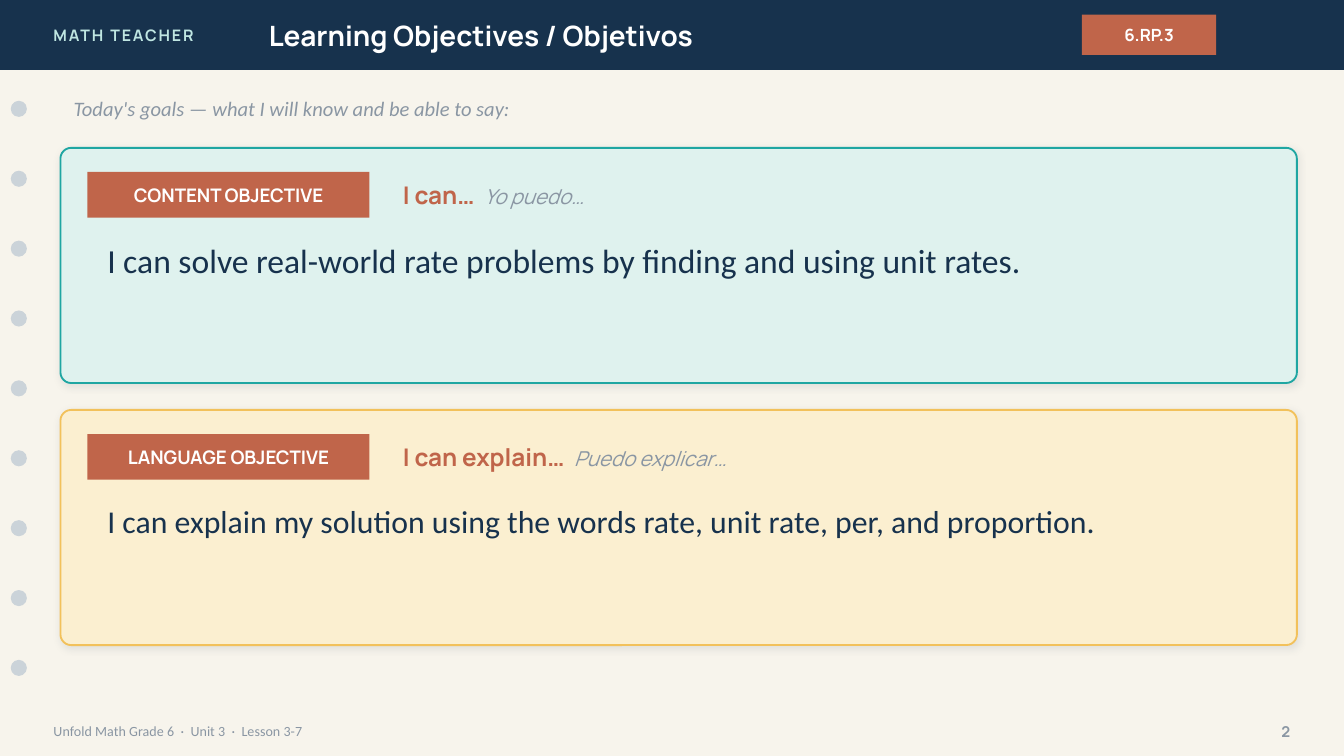
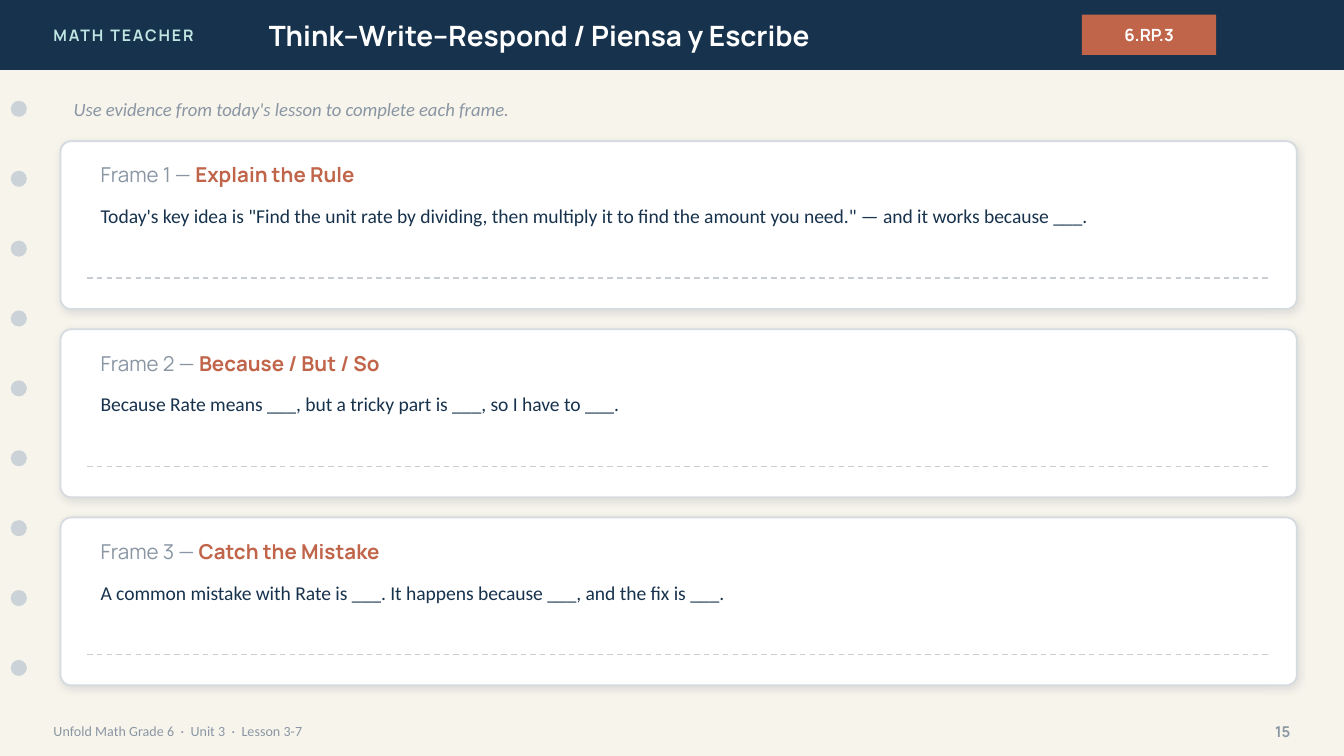
from lxml.etree import SubElement
from pptx import Presentation
from pptx.dml.color import RGBColor
from pptx.enum.dml import MSO_LINE
from pptx.enum.shapes import MSO_CONNECTOR, MSO_SHAPE
from pptx.enum.text import MSO_ANCHOR, MSO_AUTO_SIZE, PP_ALIGN
from pptx.oxml.ns import qn
from pptx.util import Pt

HUES = {
    "paper": "F7F4EC", "navy": "17324D", "mint": "BFE6E2", "white": "FFFFFF",
    "rust": "C0654A", "dot": "CBD3D9", "gray": "8A96A3", "shade": "1C2E42",
    "edge": "D6DBDF", "rule": "C7CDD2", "teal": "1FA6A2", "aqua": "DFF2EE",
    "gold": "F2C15B", "cream": "FBEFD0",
}
HEAD, BODY = "Manrope", "Calibri"
LEFT, WIDE, BAND = 32.4, 662.4, 37.44

GOALS = [
    ("CONTENT OBJECTIVE", "I can…  ", "Yo puedo…",
     "I can solve real-world rate problems by finding and using unit rates.",
     18, "aqua", "teal"),
    ("LANGUAGE OBJECTIVE", "I can explain…  ", "Puedo explicar…",
     "I can explain my solution using the words rate, unit rate, per, and proportion.",
     17, "cream", "gold"),
]
FRAMES = [
    ("Explain the Rule",
     "Today's key idea is \"Find the unit rate by dividing, then multiply it "
     "to find the amount you need.\" — and it works because ___."),
    ("Because / But / So",
     "Because Rate means ___, but a tricky part is ___, so I have to ___."),
    ("Catch the Mistake",
     "A common mistake with Rate is ___. It happens because ___, and the fix is ___."),
]


def hue(name):
    """Return the named colour."""
    return RGBColor.from_string(HUES[name])


def write(shape, text, size=10, color="navy", font=BODY, bold=False, italic=False,
          align=PP_ALIGN.LEFT, anchor=MSO_ANCHOR.MIDDLE, lead=None, track=None):
    """Add a formatted run to the first paragraph of a shape."""
    frame = shape.text_frame
    frame.word_wrap = True
    frame.auto_size = MSO_AUTO_SIZE.NONE
    frame.vertical_anchor = anchor
    para = frame.paragraphs[0]
    para.alignment = align
    if lead:
        para.line_spacing = lead
    run = para.add_run()
    run.text = text
    run.font.size = Pt(size)
    run.font.name = font
    run.font.bold = bold
    run.font.italic = italic
    run.font.color.rgb = hue(color)
    if track:
        run.font._element.set("spc", str(track * 100))


def label(slide, box, text, **style):
    """Add a text box in the given box and return it."""
    shape = slide.shapes.add_textbox(*map(Pt, box))
    write(shape, text, **style)
    return shape


def block(slide, box, fill, kind=MSO_SHAPE.RECTANGLE):
    """Add a plain filled shape."""
    shape = slide.shapes.add_shape(kind, *map(Pt, box))
    shape.shadow.inherit = False
    shape.fill.solid()
    shape.fill.fore_color.rgb = hue(fill)
    shape.line.fill.background()
    return shape


def tag(slide, box, text, size):
    """Add a rust tag with centred text."""
    write(block(slide, box, "rust"), text, size=size, color="white", font=HEAD,
          bold=True, align=PP_ALIGN.CENTER)


def card(slide, box, fill, edge):
    """Add a rounded card with a soft shadow."""
    shape = block(slide, box, fill, MSO_SHAPE.ROUNDED_RECTANGLE)
    shape.adjustments[0] = 5.76 / box[3]
    shape.line.color.rgb = hue(edge)
    shape.line.width = Pt(1)
    glow = SubElement(shape.element.spPr.find(qn("a:effectLst")), qn("a:outerShdw"),
                      blurRad=str(Pt(4)), dist=str(Pt(1)), dir="5400000",
                      algn="bl", rotWithShape="0")
    tint = SubElement(glow, qn("a:srgbClr"), val=HUES["shade"])
    SubElement(tint, qn("a:alpha"), val="10000")


def dash(slide, left, top, width):
    """Add a dashed writing line."""
    line = slide.shapes.add_connector(MSO_CONNECTOR.STRAIGHT, Pt(left), Pt(top),
                                      Pt(left + width), Pt(top))
    line.line.color.rgb = hue("rule")
    line.line.width = Pt(0.75)
    line.line.dash_style = MSO_LINE.DASH
    SubElement(line.element.spPr, qn("a:effectLst"))


def header(slide, title):
    """Draw the top band with its title and standard tag."""
    block(slide, (0, 0, 720, BAND), "navy")
    label(slide, (21.6, 0, 172.8, BAND), "MATH TEACHER", size=8.5, color="mint",
          font=HEAD, bold=True, track=1)
    name = slide.shapes.title
    slide.shapes.element.append(name.element)
    name.left, name.top, name.width, name.height = map(Pt, (136.8, 0, 403.2, BAND))
    write(name, title, size=15, color="white", font=HEAD, bold=True)
    tag(slide, (579.6, 7.92, 72, 21.6), "6.RP.3", 9)


def footer(slide, page):
    """Draw the course line and page number."""
    top, high = 381.6, 20.16
    label(slide, (21.6, top, 504, high), "Unfold Math Grade 6  ·  Unit 3  ·  Lesson 3-7",
          size=7.5, color="gray")
    label(slide, (662.4, top, 36, high), str(page), size=8, color="gray", font=HEAD,
          bold=True, align=PP_ALIGN.RIGHT)


def base(deck, title, page, hint, size):
    """Add a slide with the shared parts and a hint line."""
    slide = deck.slides.add_slide(deck.slide_layouts[5])
    header(slide, title)
    for row in range(9):
        block(slide, (5.76, 54 + row * BAND, 8.64, 8.64), "dot", MSO_SHAPE.OVAL)
    footer(slide, page)
    label(slide, (LEFT, 47.52, WIDE, 21.6), hint, size=size, color="gray", italic=True)
    return slide


def goal(slide, box, name, stem, gloss, text, size, fill, edge):
    """Draw one objective card."""
    left, top = box[:2]
    card(slide, box, fill, edge)
    tag(slide, (left + 14.4, top + 12.96, 151.2, 24.48), name, 10)
    lead = label(slide, (left + 176.4, top + 12.96, 475.2, 24.48), stem, size=13,
                 color="rust", font=HEAD, bold=True)
    write(lead, gloss, size=11, color="gray", font=HEAD, italic=True)
    label(slide, (left + 18, top + 44.64, 626.4, 72), text, size=size,
          anchor=MSO_ANCHOR.TOP, lead=1.05)


def prompt(slide, box, number, name, text):
    """Draw one sentence frame card."""
    left, top, width = box[0] + 14.4, box[1], box[2] - 28.8
    card(slide, box, "white", "edge")
    head = label(slide, (left, top + 7.2, width, 21.6), f"Frame {number} — ", size=11,
                 color="gray", font=HEAD)
    write(head, name, size=11, color="rust", font=HEAD, bold=True)
    label(slide, (left, top + 30.24, width, 28.8), text, size=10.5,
          anchor=MSO_ANCHOR.TOP)
    dash(slide, left, top + 73.44, width)


def main():
    """Build and save the deck."""
    deck = Presentation()
    deck.slide_width, deck.slide_height = Pt(720), Pt(405)
    back = deck.slide_master.background.fill
    back.solid()
    back.fore_color.rgb = hue("paper")

    slide = base(deck, "Learning Objectives / Objetivos", 2,
                 "Today's goals — what I will know and be able to say:", 11)
    for row, item in enumerate(GOALS):
        goal(slide, (LEFT, 79.2 + row * 140.4, WIDE, 126), *item)

    slide = base(deck, "Think–Write–Respond / Piensa y Escribe", 15,
                 "Use evidence from today's lesson to complete each frame.", 10)
    for row, item in enumerate(FRAMES):
        prompt(slide, (LEFT, 75.6 + row * 100.8, WIDE, 90), row + 1, *item)

    deck.save("out.pptx")


if __name__ == "__main__":
    main()
